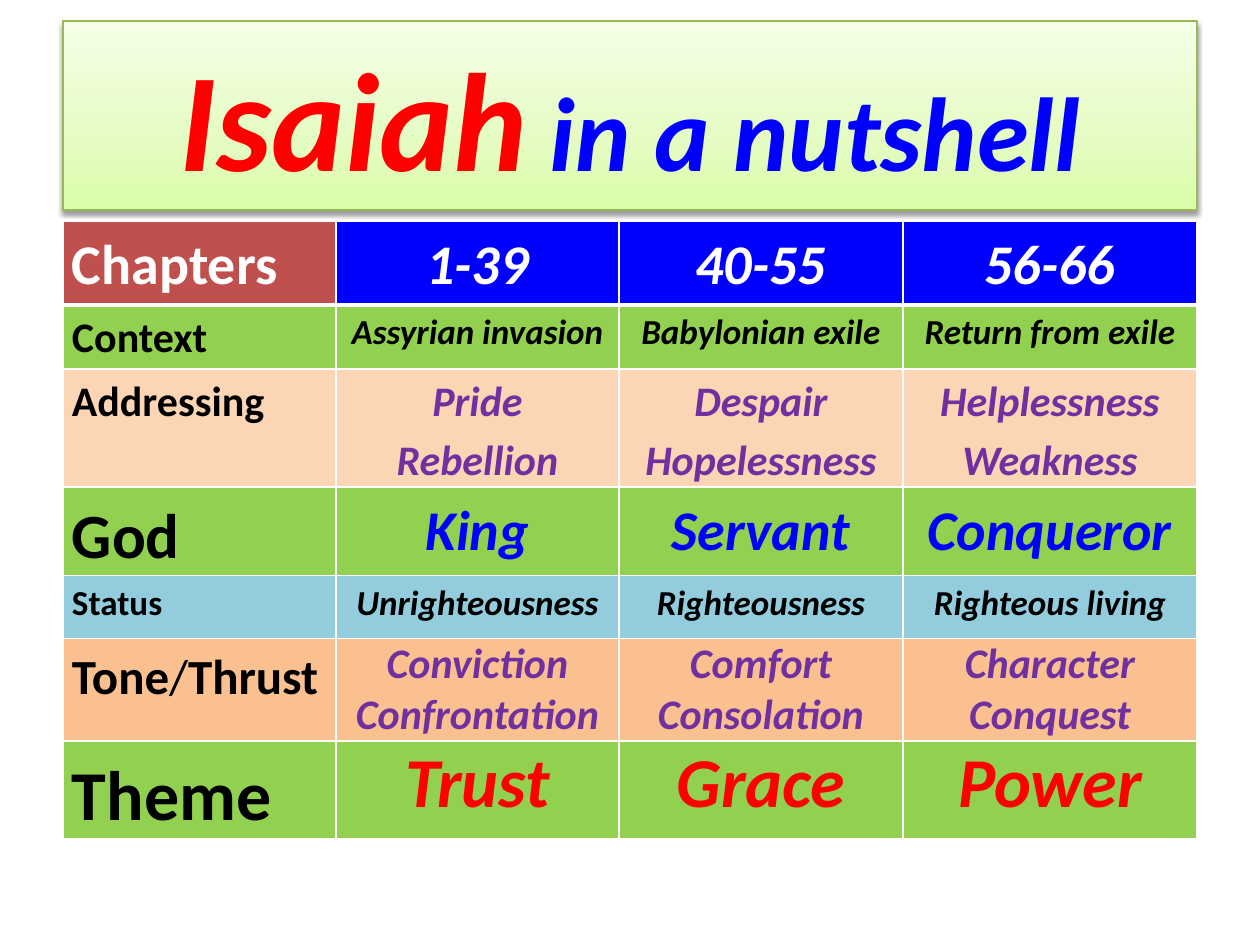
"""Build the one-page overview table of Isaiah."""
from dataclasses import dataclass

from lxml.etree import SubElement
from pptx import Presentation
from pptx.dml.color import RGBColor as Rgb
from pptx.enum.shapes import MSO_SHAPE as Preset
from pptx.enum.text import MSO_ANCHOR as Anchor, PP_ALIGN as Align
from pptx.oxml.ns import qn
from pptx.util import Emu, Pt

PX = 914400 / 126
COLORS = {
    "white": "FFFFFF", "black": "000000", "red": "FF0000", "blue": "0000FF",
    "purple": "7030A0", "brick": "C0504D", "green": "92D050", "peach": "FCD5B5",
    "sky": "93CDDD", "orange": "FAC090", "olive": "98B955",
    "lime": "DAFDA7", "pale lime": "E4FCC2", "mist": "F5FFE7",
}
COLUMN_WIDTHS = (273, 283, 284, 294)
TITLE_STOPS = ((0, "lime"), (35, "pale lime"), (100, "mist"))


@dataclass(frozen=True)
class Style:
    size: int
    color: str
    italic: bool = False
    bold: bool = True


@dataclass(frozen=True)
class Topic:
    height: int
    label: str
    label_style: Style
    entries: tuple[str, ...]
    entry_style: Style
    fill: str
    label_fill: str = ""
    spacing: float = 1.15


TITLE = (
    ("Isaiah", Style(80, "red", True)),
    (" ", Style(54, "blue", True)),
    ("in a nutshell", Style(60, "blue", True)),
)
TOPICS = (
    Topic(84, "Chapters", Style(32, "white"), ("1-39", "40-55", "56-66"),
          Style(32, "white", True), "blue", "brick"),
    Topic(64, "Context", Style(24, "black"),
          ("Assyrian invasion", "Babylonian exile", "Return from exile"),
          Style(20, "black", True), "green"),
    Topic(63, "Addressing", Style(24, "black"),
          ("Pride\nRebellion", "Despair\nHopelessness", "Helplessness\nWeakness"),
          Style(24, "purple", True), "peach"),
    Topic(63, "God", Style(36, "black"), ("King", "Servant", "Conqueror"),
          Style(32, "blue", True), "green"),
    Topic(63, "Status", Style(20, "black"),
          ("Unrighteousness", "Righteousness", "Righteous living"),
          Style(20, "black", True), "sky"),
    Topic(84, "Tone/Thrust", Style(28, "black"),
          ("Conviction\nConfrontation", "Comfort\nConsolation", "Character\nConquest"),
          Style(24, "purple", True), "orange", spacing=1.0),
    Topic(63, "Theme", Style(40, "black"), ("Trust", "Grace", "Power"),
          Style(40, "red", True), "green", spacing=1.0),
)


def px(length: int) -> Emu:
    """Turn pixels into EMU."""
    return Emu(round(length * PX))


def rgb(name: str) -> Rgb:
    """Look up a named colour."""
    return Rgb.from_string(COLORS[name])


def add_run(paragraph, text: str, style: Style, bold: bool = True) -> None:
    """Append one styled run."""
    run = paragraph.add_run()
    run.text = text
    formats = {"name": "Calibri", "size": Pt(style.size),
               "bold": style.bold and bold, "italic": style.italic}
    for key, value in formats.items():
        setattr(run.font, key, value)
    run.font.color.rgb = rgb(style.color)


def draw_title(slide) -> None:
    """Draw the shaded title banner."""
    banner = slide.shapes.add_shape(Preset.RECTANGLE, px(63), px(21), px(1134), px(189))
    banner.shadow.inherit = False
    banner.fill.gradient()
    banner.fill.gradient_angle = 90
    banner.line.color.rgb = rgb("olive")
    banner.line.width = Pt(0.75)
    properties = banner._element.spPr
    stops = properties.find(qn("a:gradFill")).find(qn("a:gsLst"))
    for stop in list(stops):
        stops.remove(stop)
    for position, color in TITLE_STOPS:
        stop = SubElement(stops, qn("a:gs"), pos=str(position * 1000))
        SubElement(stop, qn("a:srgbClr"), val=COLORS[color])
    shadow = SubElement(properties.find(qn("a:effectLst")), qn("a:outerShdw"),
                        blurRad=str(Pt(3.1)), dist=str(Pt(1.6)), dir="5400000",
                        rotWithShape="0")
    shade = SubElement(shadow, qn("a:srgbClr"), val=COLORS["black"])
    SubElement(shade, qn("a:alpha"), val="38000")
    frame = banner.text_frame
    frame.word_wrap = True
    frame.vertical_anchor = Anchor.MIDDLE
    heading = frame.paragraphs[0]
    heading.alignment = Align.CENTER
    for text, style in TITLE:
        add_run(heading, text, style)


def add_borders(cell, top: int, bottom: int) -> None:
    """Give a cell white edges, with widths in points."""
    edges = {"lnL": 1, "lnR": 1, "lnT": top, "lnB": bottom}
    for tag, width in edges.items():
        edge = SubElement(cell._tc.get_or_add_tcPr(), qn(f"a:{tag}"), w=str(Pt(width)))
        solid = SubElement(edge, qn("a:solidFill"))
        SubElement(solid, qn("a:srgbClr"), val=COLORS["white"])


def fill_cell(cell, text: str, style: Style, fill: str, align: Align,
              spacing: float) -> None:
    """Colour a cell and write one paragraph per line of text."""
    cell.fill.solid()
    cell.fill.fore_color.rgb = rgb(fill)
    margins = {"margin_left": px(9), "margin_right": px(9),
               "margin_top": 0, "margin_bottom": 0}
    for key, value in margins.items():
        setattr(cell, key, value)
    frame = cell.text_frame
    for index, line in enumerate(text.split("\n")):
        paragraph = frame.add_paragraph() if index else frame.paragraphs[0]
        paragraph.alignment = align
        paragraph.line_spacing = spacing
        for part in filter(None, line.partition("/")):
            add_run(paragraph, part, style, bold=part != "/")


def draw_topics(slide) -> None:
    """Draw the table of topics by chapter range."""
    table = slide.shapes.add_table(len(TOPICS), len(COLUMN_WIDTHS), px(63), px(221),
                                   px(sum(COLUMN_WIDTHS)), px(611)).table
    for column, width in zip(table.columns, COLUMN_WIDTHS):
        column.width = px(width)
    for index, topic in enumerate(TOPICS):
        table.rows[index].height = px(topic.height)
        for cell in table.rows[index].cells:
            add_borders(cell, 3 if index == 1 else 1, 3 if index == 0 else 1)
        fill_cell(table.cell(index, 0), topic.label, topic.label_style,
                  topic.label_fill or topic.fill, Align.LEFT, 1.15)
        for column, entry in enumerate(topic.entries, 1):
            fill_cell(table.cell(index, column), entry, topic.entry_style,
                      topic.fill, Align.CENTER, topic.spacing)


def main() -> None:
    """Build and save the slide."""
    deck = Presentation()
    deck.slide_width, deck.slide_height = px(1260), px(945)
    slide = deck.slides.add_slide(deck.slide_layouts[6])
    draw_title(slide)
    draw_topics(slide)
    deck.save("out.pptx")


if __name__ == "__main__":
    main()
